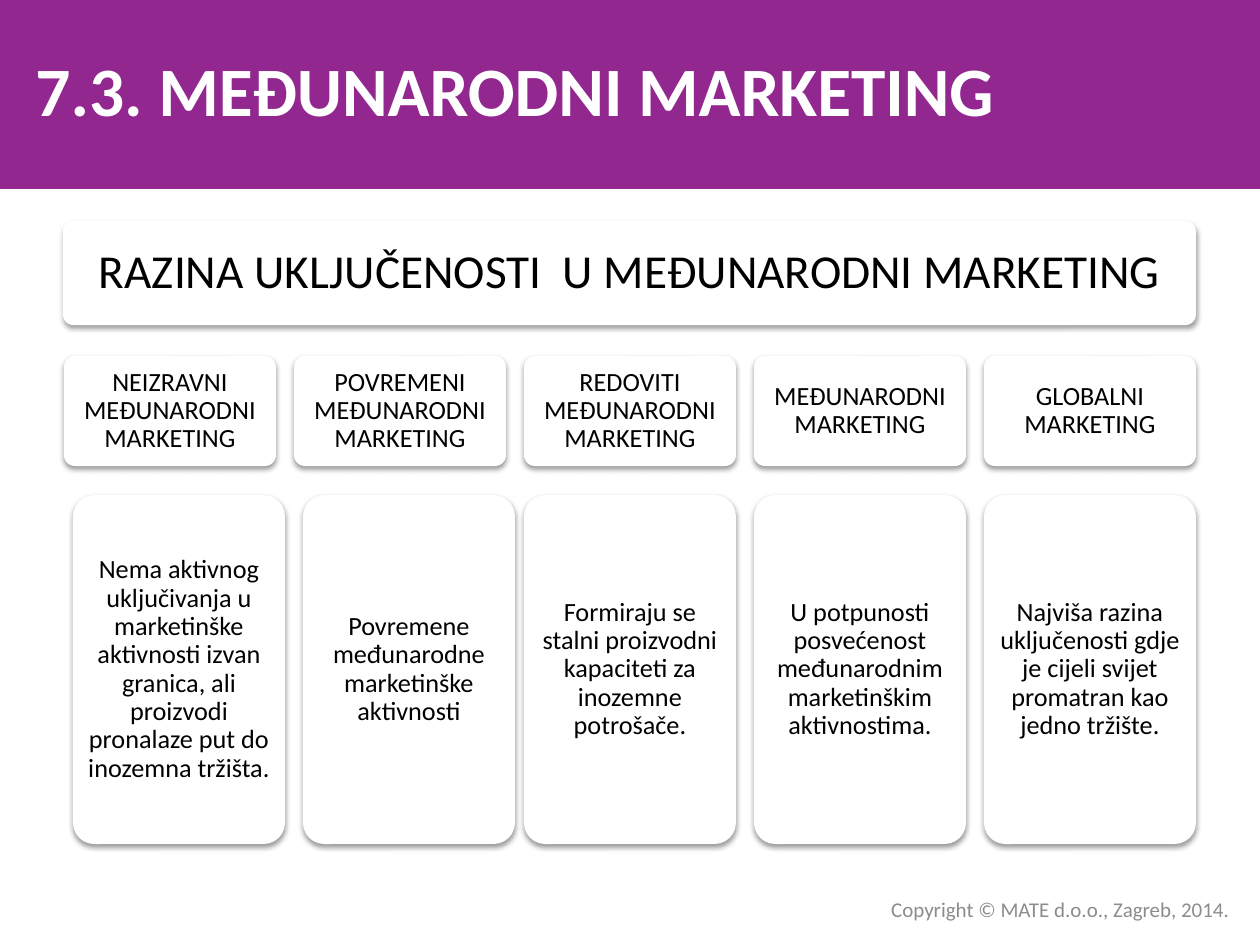
from lxml import etree
from pptx import Presentation
from pptx.dml.color import RGBColor
from pptx.enum.shapes import MSO_SHAPE
from pptx.enum.text import MSO_ANCHOR, MSO_AUTO_SIZE, PP_ALIGN
from pptx.oxml.ns import qn
from pptx.util import Emu, Pt

RECT, ROUNDED = MSO_SHAPE.RECTANGLE, MSO_SHAPE.ROUNDED_RECTANGLE
CENTER, RIGHT = PP_ALIGN.CENTER, PP_ALIGN.RIGHT
MIDDLE, NO_FIT = MSO_ANCHOR.MIDDLE, MSO_AUTO_SIZE.NONE
EMU_PER_PX = 914400 / 126
FONT = "Calibri"
COLORS = {"band": "92278F", "white": "FFFFFF", "text": "000000", "footer": "8C8C8C"}

LEVELS = [
    ("NEIZRAVNI MEĐUNARODNI MARKETING",
     "Nema aktivnog uključivanja u marketinške aktivnosti izvan granica, "
     "ali proizvodi pronalaze put do inozemna tržišta.", 9),
    ("POVREMENI MEĐUNARODNI MARKETING",
     "Povremene međunarodne marketinške aktivnosti", 9),
    ("REDOVITI MEĐUNARODNI MARKETING",
     "Formiraju se stalni proizvodni kapaciteti za inozemne potrošače.", 0),
    ("MEĐUNARODNI MARKETING",
     "U potpunosti posvećenost međunarodnim marketinškim aktivnostima.", 0),
    ("GLOBALNI MARKETING",
     "Najviša razina uključenosti gdje je cijeli svijet promatran kao jedno tržište.", 0),
]


def px(n):
    return Emu(round(n * EMU_PER_PX))


def color(name):
    return RGBColor.from_string(COLORS[name])


def place(sp, x, y, w, h):
    sp.left, sp.top, sp.width, sp.height = px(x), px(y), px(w), px(h)


def write(sp, text, size, ink, align=CENTER, bold=False):
    tf = sp.text_frame
    tf.text = text
    tf.word_wrap = True
    tf.auto_size = NO_FIT
    tf.vertical_anchor = MIDDLE
    p = tf.paragraphs[0]
    p.alignment = align
    p.font.name, p.font.size, p.font.bold = FONT, Pt(size), bold
    p.font.color.rgb = color(ink)
    return tf


def add_box(s, kind, x, y, w, h, fill):
    sp = s.shapes.add_shape(kind, px(x), px(y), px(w), px(h))
    sp.shadow.inherit = False
    sp.fill.solid()
    sp.fill.fore_color.rgb = color(fill)
    sp.line.fill.background()
    return sp


def add_shadow(sp):
    effects = sp._element.spPr.find(qn("a:effectLst"))
    shadow = etree.SubElement(effects, qn("a:outerShdw"), blurRad=str(Pt(3.1)),
                              dist=str(Pt(1.6)), dir="5400000", rotWithShape="0")
    tint = etree.SubElement(shadow, qn("a:srgbClr"), val=COLORS["text"])
    etree.SubElement(tint, qn("a:alpha"), val="38000")


def add_card(s, x, y, w, h, text, size, inset):
    sp = add_box(s, ROUNDED, x, y, w, h, "white")
    sp.adjustments[0] = 0.1
    add_shadow(sp)
    tf = write(sp, text, size, "text")
    tf.margin_left = tf.margin_right = tf.margin_top = tf.margin_bottom = px(inset)
    tf.paragraphs[0].line_spacing = 0.9


def add_title(s, x, y, w, h):
    band = add_box(s, RECT, x, y, w, h, "band")
    title = s.shapes.title
    title._element.addprevious(band._element)
    place(title, x, y + 10, 1030, 158)
    write(title, "7.3. MEĐUNARODNI MARKETING", 39.6, "white", bold=True)


def add_levels(s, x, y, w, h):
    add_card(s, x, y, w, 104, "RAZINA UKLJUČENOSTI  U MEĐUNARODNI MARKETING", 27, 14)
    card_w, pitch, head_y, body_y = 212, 230, 135, 274
    for i, (name, detail, shift) in enumerate(LEVELS):
        left = x + 1 + i * pitch
        add_card(s, left, y + head_y, card_w, 110, name, 15, 8)
        add_card(s, left + shift, y + body_y, card_w, h - body_y, detail, 15, 8)


def add_footer(s, x, y, w, h):
    sp = s.shapes.add_textbox(px(x), px(y), px(w), px(h))
    write(sp, "Copyright © MATE d.o.o., Zagreb, 2014.", 12, "footer", RIGHT)


def main():
    prs = Presentation()
    prs.slide_width, prs.slide_height = px(1260), px(945)
    s = prs.slides.add_slide(prs.slide_layouts[5])
    add_title(s, 0, 0, 1260, 189)
    add_levels(s, 63, 221, 1133, 623)
    add_footer(s, 591, 890, 651, 38)
    prs.save("out.pptx")


if __name__ == "__main__":
    main()
